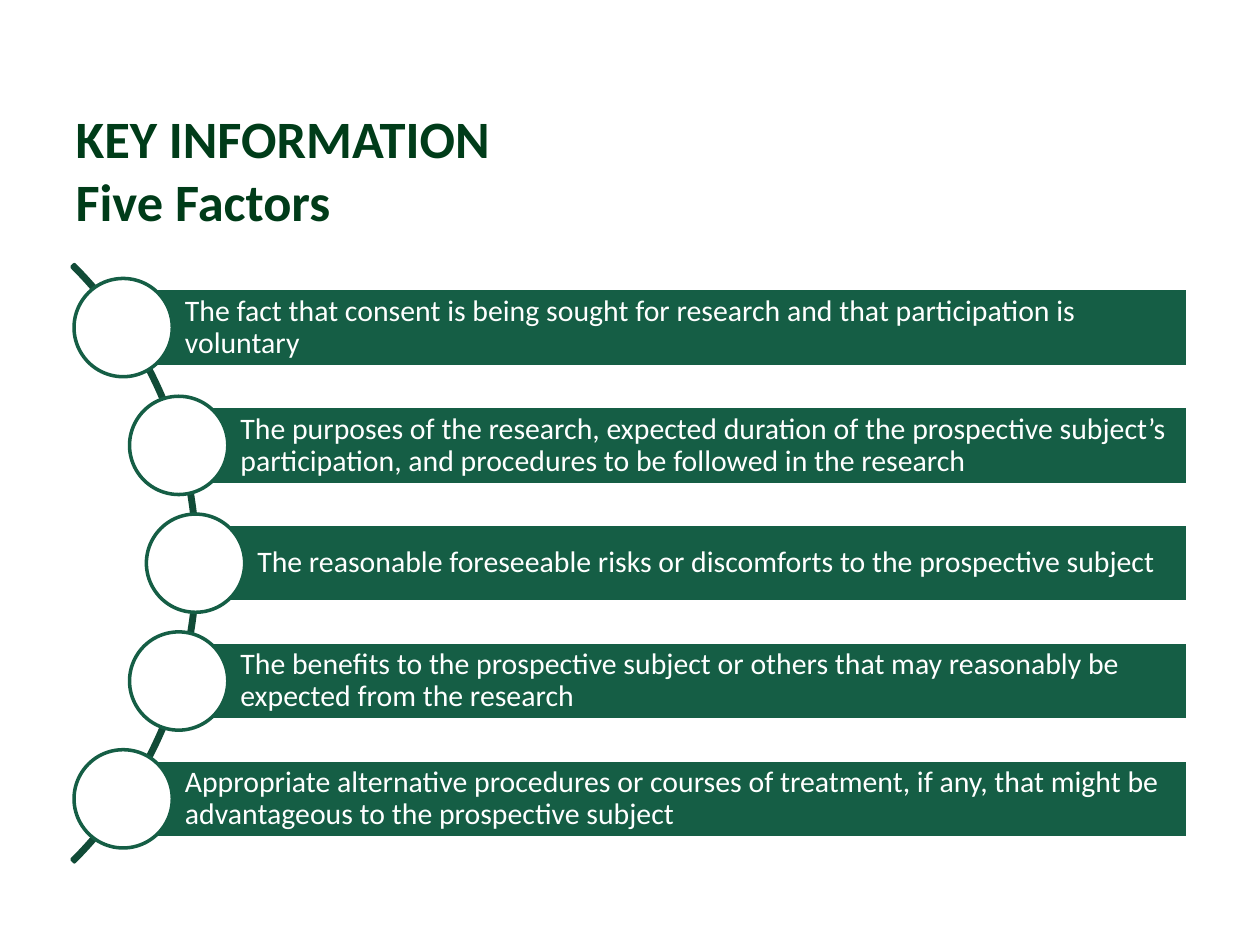
from math import sqrt

from pptx import Presentation
from pptx.dml.color import RGBColor
from pptx.enum.shapes import MSO_SHAPE as SHAPE
from pptx.enum.text import MSO_ANCHOR as ANCHOR, PP_ALIGN as ALIGN
from pptx.util import Inches, Pt

COLORS = {"title": "003C19", "bar": "155E45", "arc": "114B37", "white": "FFFFFF"}
FACTORS = [
    "The fact that consent is being sought for research and that participation is voluntary",
    "The purposes of the research, expected duration of the prospective subject’s "
    "participation, and procedures to be followed in the research",
    "The reasonable foreseeable risks or discomforts to the prospective subject",
    "The benefits to the prospective subject or others that may reasonably be "
    "expected from the research",
    "Appropriate alternative procedures or courses of treatment, if any, that might be "
    "advantageous to the prospective subject",
]


def rgb(name):
    """Return the named color."""
    return RGBColor.from_string(COLORS[name])


def set_text(tf, text, size, color, bold=False, anchor=ANCHOR.MIDDLE, spacing=1.0,
             left=0.1, inset=0.05, right=0.1):
    """Write left-aligned wrapped text into a text frame."""
    tf.word_wrap = True
    tf.vertical_anchor = anchor
    tf.margin_left, tf.margin_right = Inches(left), Inches(right)
    tf.margin_top = tf.margin_bottom = Inches(inset)
    tf.text = text
    p = tf.paragraphs[0]
    p.alignment = ALIGN.LEFT
    p.line_spacing = spacing
    for r in p.runs:
        r.font.name, r.font.size, r.font.bold = "Calibri", Pt(size), bold
        r.font.color.rgb = rgb(color)


def add_outlined(slide, kind, x, y, w, h, line, fill=None):
    """Add a preset shape with a 2 pt outline and an optional fill."""
    sp = slide.shapes.add_shape(kind, Inches(x), Inches(y), Inches(w), Inches(h))
    sp.shadow.inherit = False
    sp.line.color.rgb = rgb(line)
    sp.line.width = Pt(2)
    if fill:
        sp.fill.solid()
        sp.fill.fore_color.rgb = rgb(fill)
    else:
        sp.fill.background()
    return sp


def add_title(slide, x, y, w, h):
    """Place and format the title placeholder."""
    sp = slide.shapes.title
    sp.left, sp.top, sp.width, sp.height = (Inches(v) for v in (x, y, w, h))
    set_text(sp.text_frame, "KEY INFORMATION\vFive Factors", 30, "title",
             bold=True, anchor=ANCHOR.TOP)


def add_factor_list(slide, x, y, w, h, factors):
    """Draw bars whose round markers sit along a quarter arc spanning the box height."""
    radius = h / sqrt(2)
    center_x, center_y = x - radius / sqrt(2), y + h / 2
    arc = add_outlined(slide, SHAPE.BLOCK_ARC, center_x - radius, center_y - radius,
                       2 * radius, 2 * radius, "arc")
    for i, value in enumerate((189, 27, 0.004)):
        arc.adjustments[i] = value

    pitch, bar_h, marker = 0.935, 0.62, 0.78
    for i, text in enumerate(factors):
        dy = (i - (len(factors) - 1) / 2) * pitch
        bar_x = center_x + sqrt((radius - 0.02) ** 2 - dy ** 2)
        mid_y = center_y + dy
        bar = add_outlined(slide, SHAPE.RECTANGLE, bar_x, mid_y - bar_h / 2,
                           x + w - bar_x, bar_h, "white", "bar")
        set_text(bar.text_frame, text, 17, "white", spacing=0.9, left=0.49, right=0.05)
        add_outlined(slide, SHAPE.OVAL, bar_x - marker / 2, mid_y - marker / 2,
                     marker, marker, "bar", "white")


def main():
    """Build and save the slide."""
    prs = Presentation()
    prs.slide_width, prs.slide_height = Inches(10), Inches(7.5)
    slide = prs.slides.add_slide(prs.slide_layouts[5])
    add_title(slide, 0.5, 0.79, 9, 1.07)
    add_factor_list(slide, 0.59, 2.1, 8.84, 4.74, FACTORS)
    prs.save("out.pptx")


if __name__ == "__main__":
    main()
